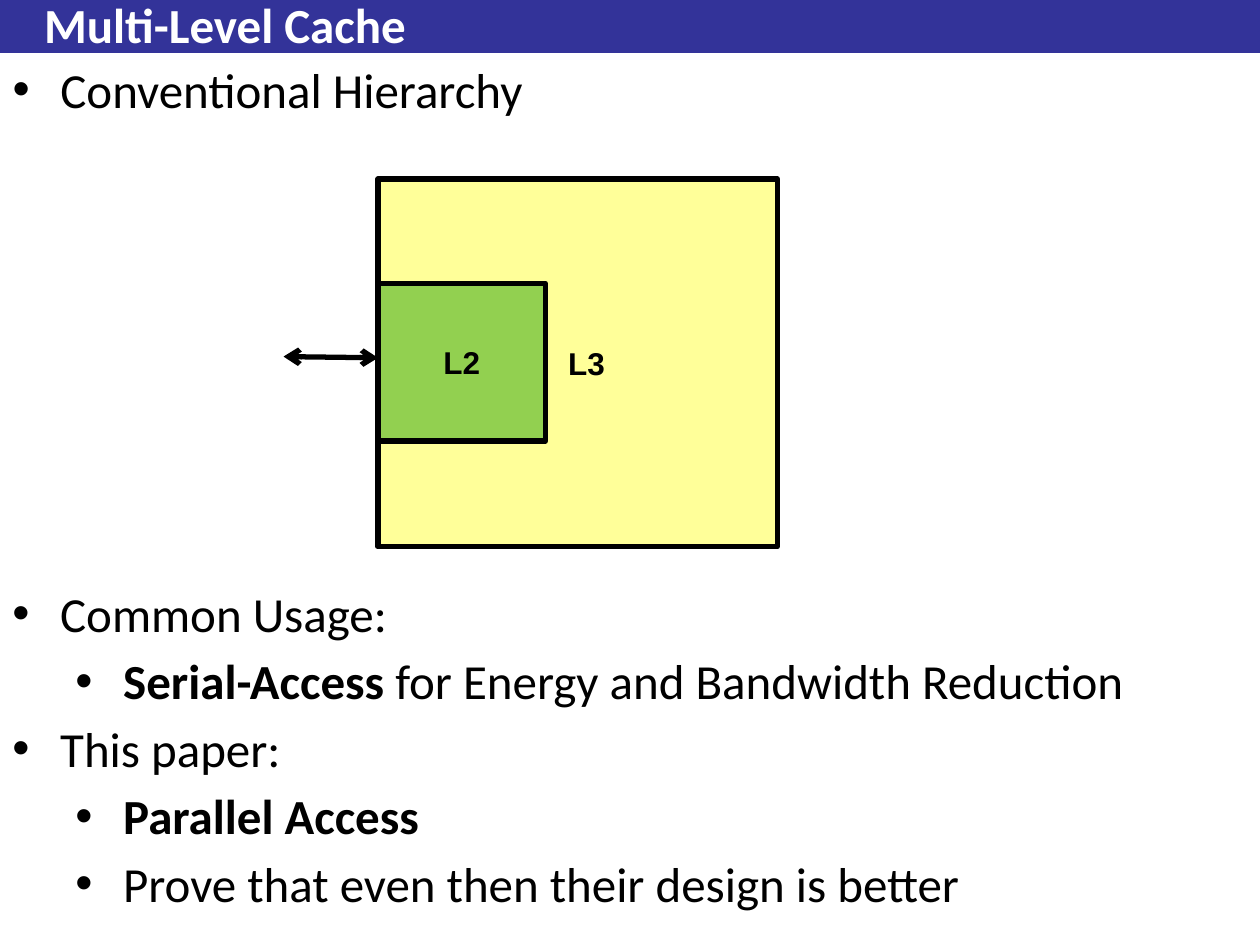
from lxml import etree
from pptx import Presentation
from pptx import util as u
from pptx.dml.color import RGBColor
from pptx.enum import shapes, text
from pptx.oxml.ns import qn

COLORS = {"bar": "333399", "light": "FFFFFF", "ink": "000000",
          "outer": "FFFF99", "inner": "92D050"}
HEADING = {"name": "Calibri", "size": u.Pt(28), "bold": True}
ITEM = {"name": "Calibri", "size": u.Pt(28)}
LABEL = {"name": "Arial", "size": u.Pt(18), "bold": True}
FRAME = {"word_wrap": True, "auto_size": text.MSO_AUTO_SIZE.NONE}


def color(name):
    return RGBColor.from_string(COLORS[name])


def apply(target, values):
    for name, value in values.items():
        setattr(target, name, value)


def place(shape, box):
    names = ("left", "top", "width", "height")
    apply(shape, dict(zip(names, map(u.Inches, box))))


def style(font, values, ink="ink"):
    apply(font, values)
    font.color.rgb = color(ink)


def add_block(page, box, fill):
    block = page.shapes.add_shape(shapes.MSO_SHAPE.RECTANGLE, *map(u.Inches, box))
    block.shadow.inherit = False
    block.fill.solid()
    block.fill.fore_color.rgb = color(fill)
    block.line.fill.background()
    return block


def title_bar(page, box):
    title = page.shapes.title
    title.element.addprevious(add_block(page, box, "bar").element)
    left, top, width, height = box
    place(title, (left + 0.25, top + 0.05, width - 0.75, height - 0.14))
    frame = title.text_frame
    apply(frame, FRAME)
    frame.vertical_anchor = text.MSO_ANCHOR.MIDDLE
    frame.text = "Multi-Level Cache"
    para = frame.paragraphs[0]
    para.alignment = text.PP_ALIGN.LEFT
    style(para.font, HEADING, "light")


def bullet_list(shape, box, items):
    place(shape, box)
    frame = shape.text_frame
    apply(frame, FRAME)
    for index, (level, spans) in enumerate(items):
        para = frame.add_paragraph() if index else frame.paragraphs[0]
        props = para._p.get_or_add_pPr()
        props.set("marL", str(u.Inches(0.38 + 0.5 * level)))
        props.set("indent", str(u.Inches(-0.38)))
        etree.SubElement(props, qn("a:buFont")).set("typeface", "Arial")
        etree.SubElement(props, qn("a:buChar")).set("char", "•")
        para.level = level
        para.alignment = text.PP_ALIGN.LEFT
        para.space_before = u.Pt(5 if index else 0)
        style(para.font, ITEM)
        for words, bold in spans:
            span = para.add_run()
            span.text = words
            span.font.bold = bold


def cache_level(page, box, fill, label, inset):
    block = add_block(page, box, fill)
    block.line.color.rgb = color("ink")
    block.line.width = u.Pt(3)
    frame = block.text_frame
    frame.margin_left = u.Inches(inset)
    frame.vertical_anchor = text.MSO_ANCHOR.MIDDLE
    frame.text = label
    para = frame.paragraphs[0]
    para.alignment = text.PP_ALIGN.CENTER
    style(para.font, LABEL)


def access_arrow(page, ends):
    arrow = page.shapes.add_connector(shapes.MSO_CONNECTOR.STRAIGHT, *map(u.Inches, ends))
    arrow.line.color.rgb = color("ink")
    arrow.line.width = u.Pt(3)
    line = arrow.line._get_or_add_ln()
    for end in ("a:headEnd", "a:tailEnd"):
        etree.SubElement(line, qn(end)).set("type", "arrow")
    etree.SubElement(arrow.element.spPr, qn("a:effectLst"))


def cache_diagram(page, box):
    left, top, width, height = box
    cache_level(page, box, "outer", "L3", 0.24)
    access_arrow(page, (left - 0.75, top + 1.41, left, top + 1.42))
    cache_level(page, (left, top + 0.83, 1.33, 1.25), "inner", "L2", 0.1)


def cache_slide(deck):
    page = deck.slides.add_slide(deck.slide_layouts[1])
    title_bar(page, (0, 0, 10, 0.42))
    bullet_list(page.placeholders[1], (0, 0.42, 10, 7.08),
                [(0, [("Conventional Hierarchy", False)])])
    cache_diagram(page, (3, 1.42, 3.17, 2.92))
    usage = page.shapes.add_textbox(0, 0, 0, 0)
    bullet_list(usage, (0, 4.58, 10, 1.92), [
        (0, [("Common Usage:", False)]),
        (1, [("Serial-Access ", True),
             ("for Energy and Bandwidth Reduction", False)]),
        (0, [("This paper:", False)]),
        (1, [("Parallel Access", True)]),
        (1, [("Prove that even then their design is better", False)]),
    ])


def main():
    deck = Presentation()
    deck.slide_width, deck.slide_height = u.Inches(10), u.Inches(7.5)
    cache_slide(deck)
    deck.save("out.pptx")


if __name__ == "__main__":
    main()
